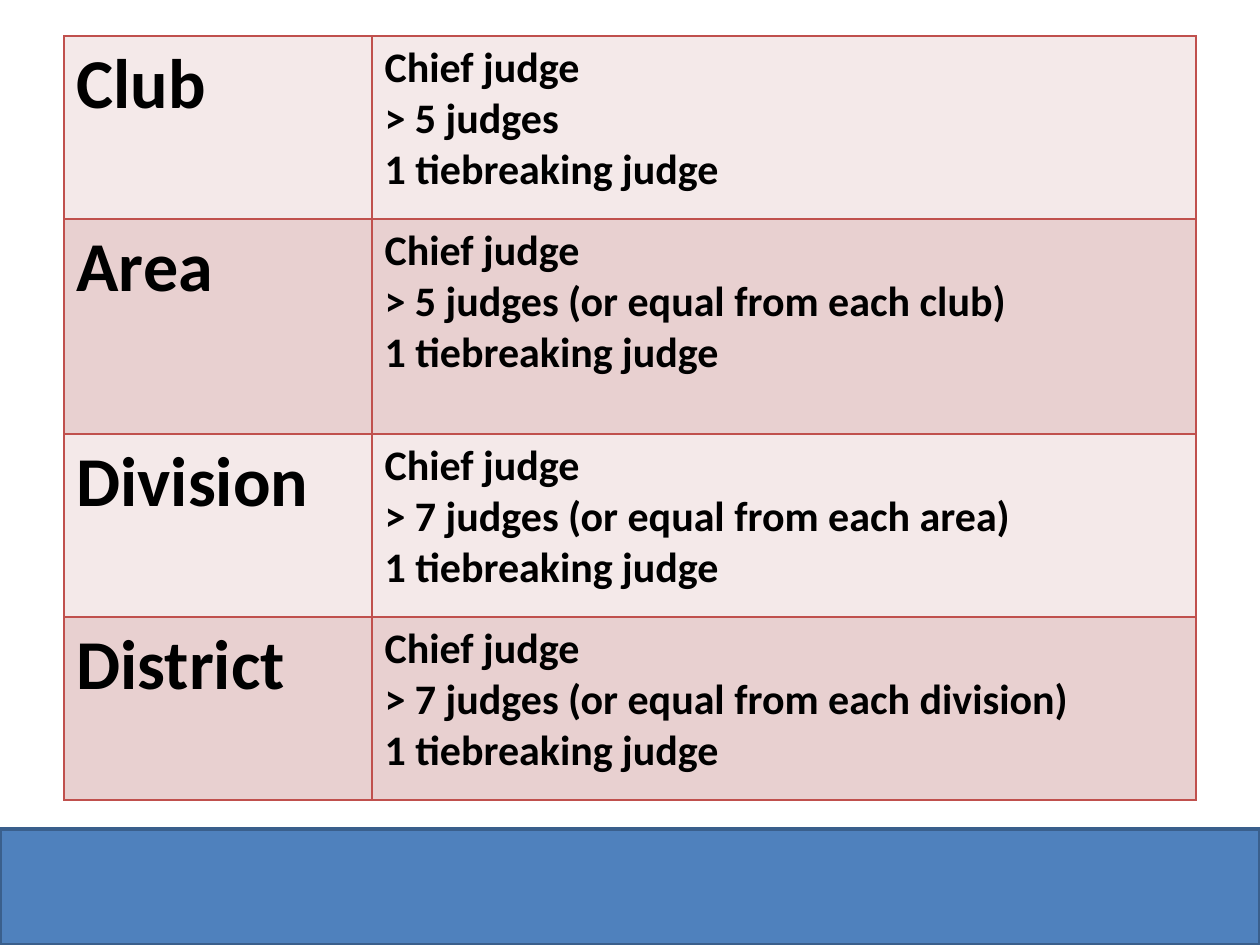
from pptx import Presentation
from pptx import util as u
from pptx.dml.color import RGBColor
from pptx.enum import shapes
from pptx.oxml import parse_xml
from pptx.oxml.ns import nsdecls

BLACK = RGBColor(0x00, 0x00, 0x00)
BLUE = RGBColor(0x4F, 0x81, 0xBD)
DARK_BLUE = RGBColor(0x3A, 0x5F, 0x8C)
RED = RGBColor(0xC0, 0x50, 0x4D)
BANDS = (RGBColor(0xF4, 0xE9, 0xE9), RGBColor(0xE8, 0xD0, 0xD0))

LEVELS = [
    ("Club", "> 5 judges"),
    ("Area", "> 5 judges (or equal from each club)"),
    ("Division", "> 7 judges (or equal from each area)"),
    ("District", "> 7 judges (or equal from each division)"),
]


class Deck:
    SCALE = 914400 / 126
    FONT = {"name": "Calibri", "bold": True}

    def __init__(self, width, height):
        self.show = Presentation()
        self.show.slide_width = self.px(width)
        self.show.slide_height = self.px(height)
        self.slide = self.show.slides.add_slide(self.show.slide_layouts[6])

    def px(self, length):
        return u.Emu(round(length * self.SCALE))

    def bar(self, *box):
        footer = self.slide.shapes.add_shape(
            shapes.MSO_SHAPE.RECTANGLE, *map(self.px, box))
        footer.shadow.inherit = False
        footer.fill.solid()
        footer.fill.fore_color.rgb = BLUE
        footer.line.color.rgb = DARK_BLUE
        footer.line.width = u.Pt(2)

    def border(self, cell):
        properties = cell._tc.get_or_add_tcPr()
        for side in "LRTB":
            properties.append(parse_xml(
                f'<a:ln{side} {nsdecls("a")} w="{u.Pt(1)}"><a:solidFill>'
                f'<a:srgbClr val="{RED}"/></a:solidFill></a:ln{side}>'))

    def fill_cell(self, cell, lines, size, band):
        self.border(cell)
        cell.fill.solid()
        cell.fill.fore_color.rgb = band
        cell.text = "\n".join(lines)
        for paragraph in cell.text_frame.paragraphs:
            for run in paragraph.runs:
                for name, value in {**self.FONT, "size": u.Pt(size)}.items():
                    setattr(run.font, name, value)
                run.font.color.rgb = BLACK

    def table(self, left, top, widths, heights, rows, sizes):
        box = (left, top, sum(widths), sum(heights))
        grid = self.slide.shapes.add_table(
            len(heights), len(widths), *map(self.px, box)).table
        grid.first_row = False
        for column, width in zip(grid.columns, widths):
            column.width = self.px(width)
        for index, (row, height, entries) in enumerate(zip(grid.rows, heights, rows)):
            row.height = self.px(height)
            for cell, lines, size in zip(row.cells, entries, sizes):
                self.fill_cell(cell, lines, size, BANDS[index % 2])


def main():
    deck = Deck(1260, 945)
    deck.bar(0, 829, 1260, 116)
    panels = [([level], ["Chief judge", judges, "1 tiebreaking judge"])
              for level, judges in LEVELS]
    deck.table(64, 36, (308, 824), (183, 215, 183, 183), panels, (40, 24))
    deck.show.save("out.pptx")


if __name__ == "__main__":
    main()
